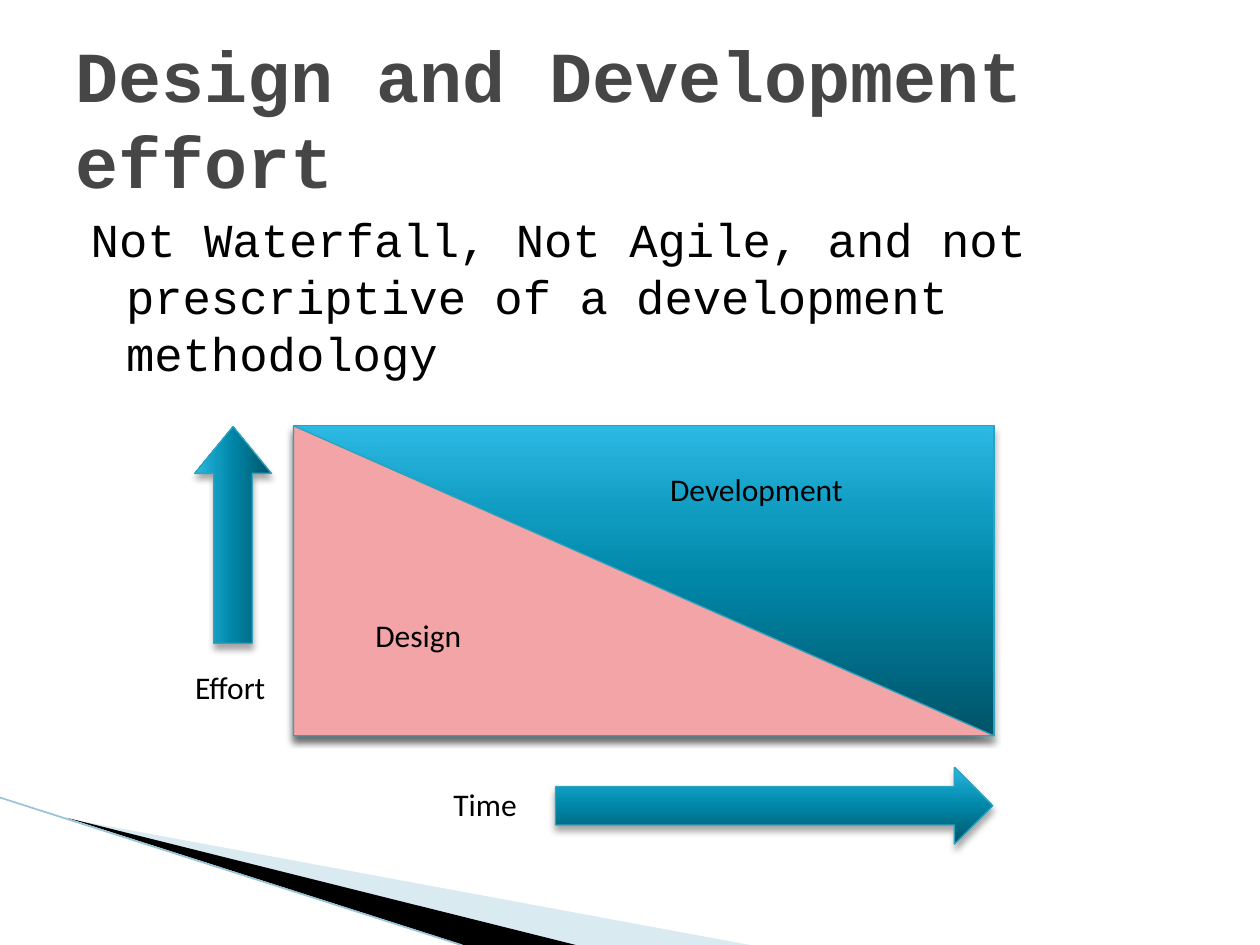
from dataclasses import dataclass

from pptx import Presentation
from pptx.dml.color import RGBColor
from pptx.enum.shapes import MSO_CONNECTOR, MSO_SHAPE
from pptx.enum.text import MSO_ANCHOR, MSO_AUTO_SIZE, PP_ALIGN
from pptx.oxml import parse_xml
from pptx.oxml.ns import nsdecls, qn
from pptx.util import Inches, Pt

RECT, TRIANGLE, ARROW = MSO_SHAPE.RECTANGLE, MSO_SHAPE.RIGHT_TRIANGLE, MSO_SHAPE.RIGHT_ARROW
STRAIGHT = MSO_CONNECTOR.STRAIGHT
TOP, MIDDLE = MSO_ANCHOR.TOP, MSO_ANCHOR.MIDDLE
LEFT = PP_ALIGN.LEFT
NO_FIT, GROW = MSO_AUTO_SIZE.NONE, MSO_AUTO_SIZE.SHAPE_TO_FIT_TEXT


@dataclass(frozen=True)
class Theme:
    code_font: str = "Courier New"
    label_font: str = "Calibri"
    title_size: int = 41
    body_size: int = 27
    label_size: int = 18
    title: str = "464646"
    text: str = "000000"
    outline: str = "2DA2BF"
    design: str = "F2A4A7"
    wedge_pale: str = "A0CBDC"
    wedge_dark: str = "000000"
    wedge_line: str = "97C5D8"
    gradient: tuple = ((0, "005367"), (50, "0086A7"), (70, "0E9ABE"), (100, "2CB9E3"))


def write(tf, text, *, font, size, color, bold=False, anchor=TOP, fit=NO_FIT, wrap=True):
    tf.word_wrap, tf.auto_size, tf.vertical_anchor = wrap, fit, anchor
    p = tf.paragraphs[0]
    p.alignment, p.space_before = LEFT, Pt(0)
    r = p.add_run()
    r.text = text
    r.font.name, r.font.size, r.font.bold = font, Pt(size), bold
    r.font.color.rgb = RGBColor.from_string(color)
    return p


def place(sp, x, y, w, h):
    sp.left, sp.top, sp.width, sp.height = (Inches(v) for v in (x, y, w, h))


class SlideBuilder:
    def __init__(self, prs, theme):
        self.theme = theme
        self.s = prs.slides.add_slide(prs.slide_layouts[1])

    def title(self, text, *box):
        t, sp = self.theme, self.s.shapes.title
        place(sp, *box)
        write(sp.text_frame, text, font=t.code_font, size=t.title_size,
              color=t.title, bold=True, anchor=MIDDLE)

    def body(self, text, *box):
        """Fill the body placeholder with one unbulleted, hanging paragraph."""
        t, sp = self.theme, self.s.placeholders[1]
        place(sp, *box)
        p = write(sp.text_frame, text, font=t.code_font, size=t.body_size, color=t.text)
        pPr = p._p.get_or_add_pPr()
        pPr.set("marL", str(Inches(0.4)))
        pPr.set("indent", str(Inches(-0.28)))
        pPr.append(parse_xml(f"<a:buNone {nsdecls('a')}/>"))

    def label(self, text, *box):
        t = self.theme
        sp = self.s.shapes.add_textbox(*(Inches(v) for v in box))
        write(sp.text_frame, text, font=t.label_font, size=t.label_size,
              color=t.text, fit=GROW, wrap=False)

    def wedge(self, points, color, opacity=100):
        start, *rest = [(Inches(x), Inches(y)) for x, y in points]
        builder = self.s.shapes.build_freeform(*start)
        builder.add_line_segments(rest, close=True)
        sp = builder.convert_to_shape()
        sp.shadow.inherit = False
        sp.line.fill.background()
        sp.fill.solid()
        sp.fill.fore_color.rgb = RGBColor.from_string(color)
        if opacity < 100:
            clr = sp._element.spPr.find(qn("a:solidFill"))[0]
            clr.append(parse_xml(f'<a:alpha {nsdecls("a")} val="{opacity * 1000}"/>'))

    def line(self, start, end, color, width):
        ends = (Inches(v) for v in (*start, *end))
        sp = self.s.shapes.add_connector(STRAIGHT, *ends)
        sp.line.color.rgb = RGBColor.from_string(color)
        sp.line.width = Pt(width)
        sp._element.spPr.append(parse_xml(f"<a:effectLst {nsdecls('a')}/>"))

    def shape(self, kind, *box, color=None, rotation=0, head=None):
        """Add an outlined, shadowed shape; without a color it takes the gradient."""
        sp = self.s.shapes.add_shape(kind, *(Inches(v) for v in box))
        sp.rotation = rotation
        if head is not None:
            sp.adjustments[1] = head
        sp.line.color.rgb = RGBColor.from_string(self.theme.outline)
        sp.line.width = Pt(0.75)
        sp.fill.solid()
        sp.fill.fore_color.rgb = RGBColor.from_string(color or self.theme.outline)
        if color is None:
            self._gradient(sp)
        self._shadow(sp)

    def _gradient(self, sp):
        stops = "".join(f'<a:gs pos="{pos * 1000}"><a:srgbClr val="{color}"/></a:gs>'
                        for pos, color in self.theme.gradient)
        spPr = sp._element.spPr
        spPr.replace(spPr.find(qn("a:solidFill")), parse_xml(
            f'<a:gradFill {nsdecls("a")} rotWithShape="1"><a:gsLst>{stops}</a:gsLst>'
            '<a:lin ang="16200000" scaled="0"/></a:gradFill>'))

    def _shadow(self, sp):
        sp.shadow.inherit = False
        sp._element.spPr.find(qn("a:effectLst")).append(parse_xml(
            f'<a:outerShdw {nsdecls("a")} blurRad="{Pt(4)}" dist="{Pt(3)}" dir="5400000" '
            'rotWithShape="0"><a:srgbClr val="000000"><a:alpha val="35000"/></a:srgbClr>'
            '</a:outerShdw>'))


def main():
    prs = Presentation()
    prs.slide_width, prs.slide_height = Inches(10), Inches(7.5)
    theme = Theme()
    b = SlideBuilder(prs, theme)

    b.wedge([(0.55, 6.5), (5.95, 7.5), (4.56, 7.5)], theme.wedge_pale, opacity=40)
    b.wedge([(0.53, 6.49), (4.57, 7.5), (3.68, 7.5)], theme.wedge_dark)
    b.line((0, 6.33), (3.66, 7.5), theme.wedge_line, 0.95)

    b.title("Design and Development effort", 0.5, 0.3, 9, 1.25)
    b.body("Not Waterfall, Not Agile, and not prescriptive of a development methodology",
           0.5, 1.62, 9, 4.95)

    effort_area = (2.33, 3.38, 5.56, 2.46)
    b.shape(RECT, *effort_area)
    b.shape(TRIANGLE, *effort_area, color=theme.design)
    b.shape(ARROW, 4.41, 6.09, 3.47, 0.61)
    b.shape(ARROW, 0.99, 3.94, 1.72, 0.61, rotation=270, head=0.61)

    for text, x, y, w in (("Design", 2.88, 4.84, 0.89), ("Development", 5.22, 3.68, 1.59),
                          ("Time", 3.5, 6.18, 0.71), ("Effort", 1.45, 5.25, 0.77)):
        b.label(text, x, y, w, 0.4)

    prs.save("out.pptx")


if __name__ == "__main__":
    main()
